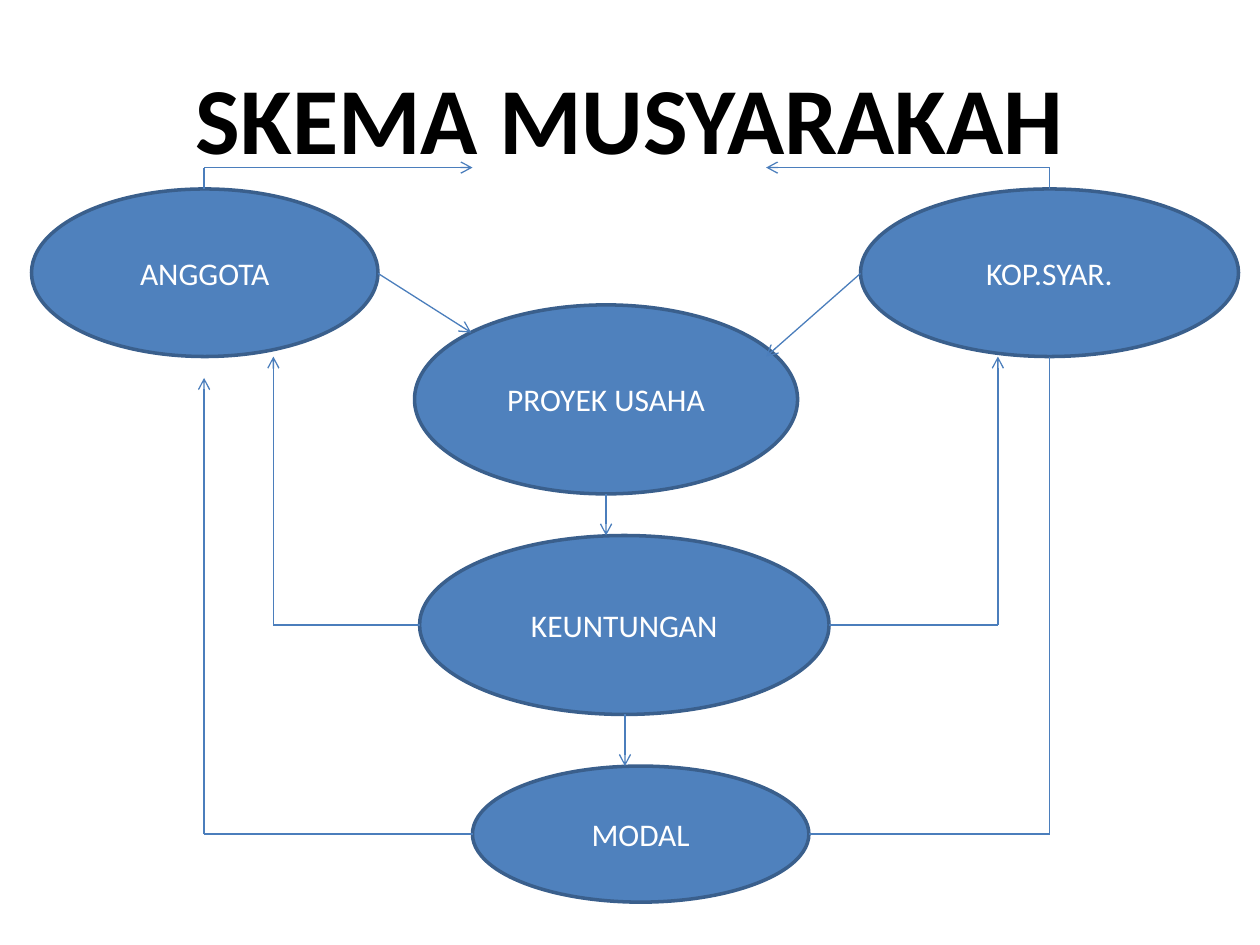
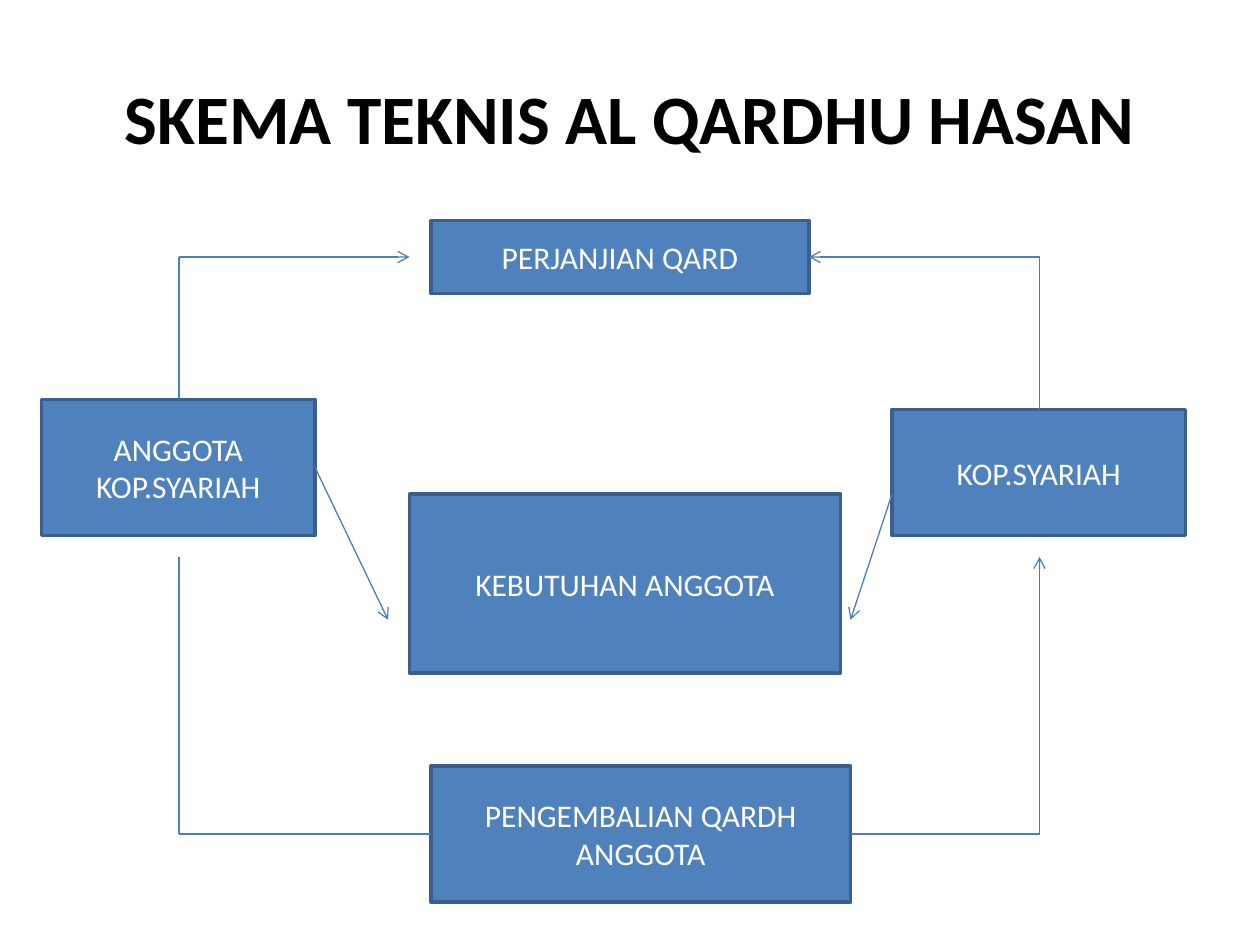
import itertools
import pptx
import pptx.util
import pptx.dml.color
import pptx.enum.shapes
import pptx.enum.text
import pptx.oxml.ns
import lxml.etree

Inches = pptx.util.Inches
SHAPE = pptx.enum.shapes.MSO_SHAPE
FILL, EDGE, WIRE, WHITE, BLACK = "4F81BD", "3A5F8C", "4B7EBC", "FFFFFF", "000000"
TITLE_BOX = (0.5, 0.3, 9, 1.25)
NODE_FONT = {"name": "Calibri", "size": pptx.util.Pt(18), "bold": False}
TITLE_FONT = {"name": "Calibri", "bold": True}
FRAME = {"word_wrap": True, "vertical_anchor": pptx.enum.text.MSO_ANCHOR.MIDDLE}


def rgb(value):
    return pptx.dml.color.RGBColor.from_string(value)


def put_text(sp, text, font, color):
    tf = sp.text_frame
    for key, value in FRAME.items():
        setattr(tf, key, value)
    p = tf.paragraphs[0]
    p.alignment = pptx.enum.text.PP_ALIGN.CENTER
    r = p.add_run()
    r.text = text
    for key, value in font.items():
        setattr(r.font, key, value)
    r.font.color.rgb = rgb(color)


slides = [
    {
        "title": "SKEMA MUSYARAKAH",
        "size": 54,
        "shape": SHAPE.OVAL,
        "nodes": [
            ("ANGGOTA", 0.25, 1.5, 2.75, 1.33),
            ("KOP.SYAR.", 6.83, 1.5, 3, 1.33),
            ("PROYEK USAHA", 3.29, 2.42, 3.04, 1.5),
            ("KEUNTUNGAN", 3.33, 4.25, 3.25, 1.42),
            ("MODAL", 3.75, 6.08, 2.67, 1.08),
        ],
        "arrows": [
            [(1.62, 1.5), (1.62, 1.33), (3.75, 1.33)],
            [(8.33, 1.5), (8.33, 1.33), (6.08, 1.33)],
            [(3.33, 4.96), (2.17, 4.96), (2.17, 2.83)],
            [(6.58, 4.96), (7.92, 4.96), (7.92, 2.83)],
            [(3.75, 6.62), (1.62, 6.62), (1.62, 3)],
            [(3, 2.17), (3.74, 2.64)],
            [(6.83, 2.17), (6.08, 2.83)],
            [(4.81, 3.92), (4.81, 4.25)],
            [(4.96, 5.67), (4.96, 6.08)],
        ],
        "lines": [[(6.42, 6.62), (8.33, 6.62), (8.33, 2.83)]],
    },
    {
        "title": "SKEMA TEKNIS AL QARDHU HASAN",
        "size": 39.6,
        "shape": SHAPE.RECTANGLE,
        "nodes": [
            ("PERJANJIAN QARD", 3.42, 1.75, 3, 0.58),
            ("ANGGOTA KOP.SYARIAH", 0.33, 3.17, 2.17, 1.08),
            ("KOP.SYARIAH", 7.08, 3.25, 2.33, 1),
            ("KEBUTUHAN ANGGOTA", 3.25, 3.92, 3.42, 1.42),
            ("PENGEMBALIAN QARDH ANGGOTA", 3.42, 6.08, 3.33, 1.08),
        ],
        "arrows": [
            [(1.42, 3.17), (1.42, 2.04), (3.25, 2.04)],
            [(8.25, 3.25), (8.25, 2.04), (6.42, 2.04)],
            [(2.5, 3.71), (3.08, 4.92)],
            [(7.08, 3.92), (6.75, 4.92)],
            [(6.75, 6.62), (8.25, 6.62), (8.25, 4.42)],
        ],
        "lines": [[(3.42, 6.62), (1.42, 6.62), (1.42, 4.42)]],
    },
]

prs = pptx.Presentation()
prs.slide_width, prs.slide_height = Inches(10), Inches(7.5)

for data in slides:
    s = prs.slides.add_slide(prs.slide_layouts[6])
    s.background.fill.solid()
    s.background.fill.fore_color.rgb = rgb(WHITE)

    sp = s.shapes.add_textbox(*map(Inches, TITLE_BOX))
    put_text(sp, data["title"], {**TITLE_FONT, "size": pptx.util.Pt(data["size"])}, BLACK)

    for text, *box in data["nodes"]:
        sp = s.shapes.add_shape(data["shape"], *map(Inches, box))
        sp.shadow.inherit = False
        sp.fill.solid()
        sp.fill.fore_color.rgb = rgb(FILL)
        sp.line.color.rgb = rgb(EDGE)
        sp.line.width = pptx.util.Pt(2)
        put_text(sp, text, NODE_FONT, WHITE)

    for kind in ("lines", "arrows"):
        for route in data[kind]:
            for start, end in itertools.pairwise(route):
                cx = s.shapes.add_connector(
                    pptx.enum.shapes.MSO_CONNECTOR.STRAIGHT, *map(Inches, start + end)
                )
                cx.line.color.rgb = rgb(WIRE)
                cx.line.width = pptx.util.Pt(0.75)
                pr = cx._element.spPr
                lxml.etree.SubElement(pr, pptx.oxml.ns.qn("a:effectLst"))
            if kind == "arrows":
                ln = pr.find(pptx.oxml.ns.qn("a:ln"))
                lxml.etree.SubElement(ln, pptx.oxml.ns.qn("a:tailEnd"), type="arrow")

prs.save("out.pptx")
